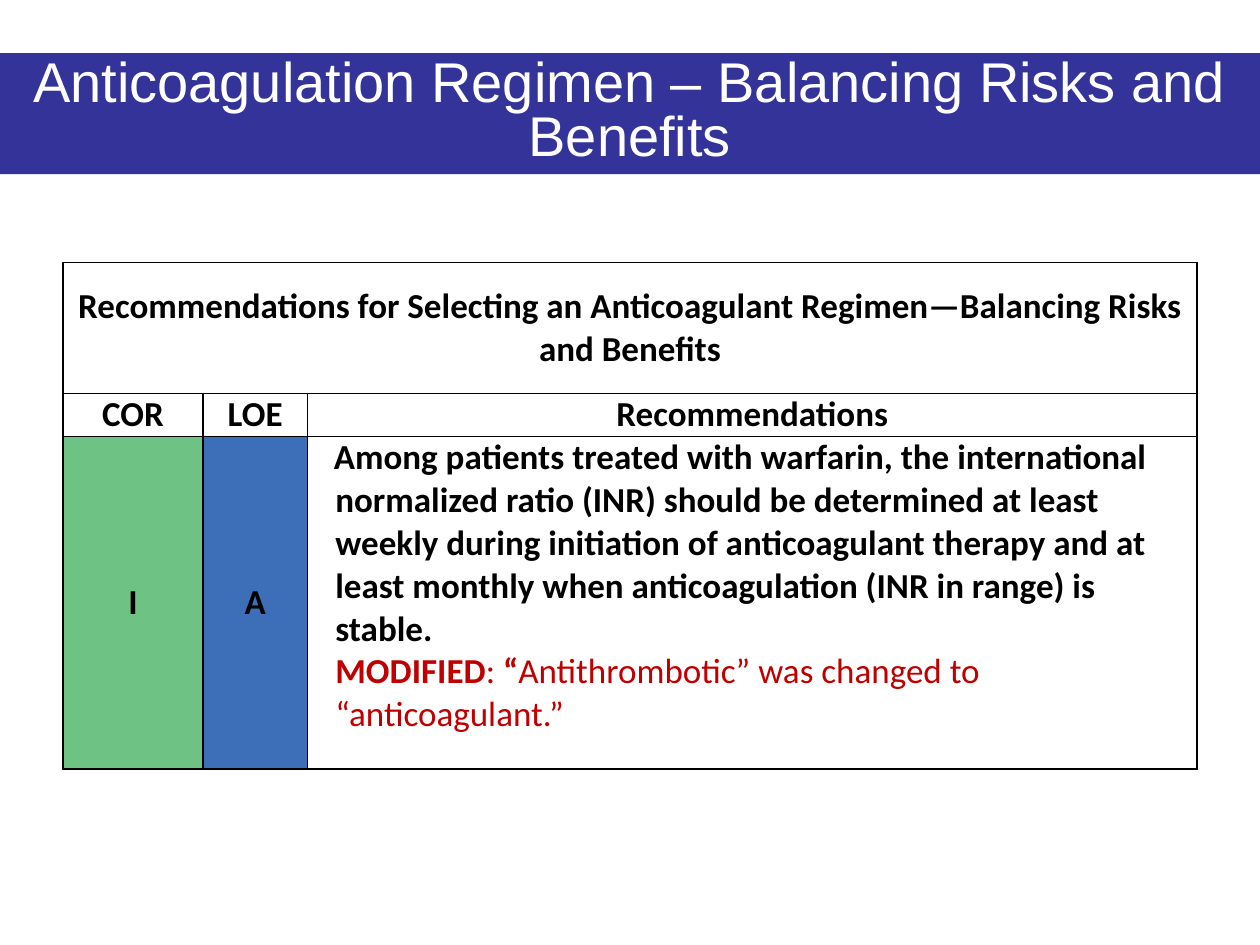
import dataclasses
import typing

import lxml.etree
import pptx
import pptx.dml.color
import pptx.enum.shapes
import pptx.enum.text
import pptx.oxml.ns
import pptx.util

Cm = pptx.util.Cm
Pt = pptx.util.Pt
CENTER = pptx.enum.text.PP_ALIGN.CENTER
LEFT = pptx.enum.text.PP_ALIGN.LEFT
MIDDLE = pptx.enum.text.MSO_ANCHOR.MIDDLE
TOP = pptx.enum.text.MSO_ANCHOR.TOP

COLORS = {
    "banner": "333399",
    "white": "FFFFFF",
    "black": "000000",
    "class_one": "6EC284",
    "level_a": "3D6FB8",
    "change": "C00000",
}
COLUMN_WIDTHS = (2.82, 2.11, 17.93)
ROW_HEIGHTS = (2.64, 0.81, 6.71)


@dataclasses.dataclass(frozen=True)
class Span:
    text: str
    color: str = "black"
    bold: bool = True


@dataclasses.dataclass(frozen=True)
class Line:
    spans: tuple[Span, ...]
    margin: float = 0
    indent: float = 0


@dataclasses.dataclass(frozen=True)
class Entry:
    row: int
    column: int
    lines: tuple[Line, ...]
    fill: str = "white"
    centered: bool = True


def label(row: int, column: int, text: str, fill: str = "white") -> Entry:
    return Entry(row, column, (Line((Span(text),)),), fill)


RECOMMENDATION = Line(
    (Span(
        "Among patients treated with warfarin, the international normalized ratio "
        "(INR) should be determined at least weekly during initiation of "
        "anticoagulant therapy and at least monthly when anticoagulation "
        "(INR in range) is stable."
    ),),
    margin=0.51,
    indent=-0.03,
)
MODIFICATION = Line(
    (
        Span("\tMODIFIED", "change"),
        Span(":", "change", False),
        Span(" “", "change"),
        Span("Antithrombotic” was changed to “anticoagulant.”", "change", False),
    ),
    margin=0.51,
    indent=-0.51,
)
ENTRIES = (
    label(0, 0, "Recommendations for Selecting an Anticoagulant Regimen—Balancing Risks and Benefits"),
    label(1, 0, "COR"),
    label(1, 1, "LOE"),
    label(1, 2, "Recommendations"),
    label(2, 0, "I", "class_one"),
    label(2, 1, "A", "level_a"),
    Entry(2, 2, (RECOMMENDATION, MODIFICATION), centered=False),
)


def rgb(name: str) -> pptx.dml.color.RGBColor:
    return pptx.dml.color.RGBColor.from_string(COLORS[name])


def style_font(font: typing.Any, family: str, size: float, color: str, bold: bool) -> None:
    font.name = family
    font.size = Pt(size)
    font.bold = bold
    font.color.rgb = rgb(color)


def draw_borders(cell: typing.Any) -> None:
    properties = cell._tc.get_or_add_tcPr()
    qn = pptx.oxml.ns.qn
    for side in ("lnL", "lnR", "lnT", "lnB"):
        border = lxml.etree.SubElement(properties, qn(f"a:{side}"), w=str(Pt(1)))
        solid = lxml.etree.SubElement(border, qn("a:solidFill"))
        lxml.etree.SubElement(solid, qn("a:srgbClr"), val=COLORS["black"])


def write_line(paragraph: typing.Any, line: Line, centered: bool) -> None:
    paragraph.alignment = CENTER if centered else LEFT
    properties = paragraph._p.get_or_add_pPr()
    properties.set("marL", str(Cm(line.margin)))
    properties.set("indent", str(Cm(line.indent)))
    for span in line.spans:
        run = paragraph.add_run()
        run.text = span.text
        style_font(run.font, "Calibri", 20, span.color, span.bold)


def fill_entry(table: typing.Any, entry: Entry) -> None:
    cell = table.cell(entry.row, entry.column)
    cell.fill.solid()
    cell.fill.fore_color.rgb = rgb(entry.fill)
    cell.vertical_anchor = MIDDLE if entry.centered else TOP
    cell.margin_left = cell.margin_right = Cm(0.05)
    cell.margin_top = cell.margin_bottom = 0
    frame = cell.text_frame
    for index, line in enumerate(entry.lines):
        paragraph = frame.add_paragraph() if index else frame.paragraphs[0]
        write_line(paragraph, line, entry.centered)


def draw_banner(slide: typing.Any, title: str) -> None:
    banner = slide.shapes.add_shape(
        pptx.enum.shapes.MSO_SHAPE.RECTANGLE, 0, Cm(1.07), Cm(25.4), Cm(2.44)
    )
    banner.shadow.inherit = False
    banner.fill.solid()
    banner.fill.fore_color.rgb = rgb("banner")
    banner.line.fill.background()
    frame = banner.text_frame
    frame.word_wrap = True
    frame.vertical_anchor = MIDDLE
    frame.text = title
    paragraph = frame.paragraphs[0]
    paragraph.alignment = CENTER
    paragraph.line_spacing = 0.8
    style_font(paragraph.runs[0].font, "Arial", 32, "white", False)


def draw_recommendations(slide: typing.Any) -> None:
    table = slide.shapes.add_table(
        len(ROW_HEIGHTS), len(COLUMN_WIDTHS), Cm(1.27), Cm(5.29),
        Cm(sum(COLUMN_WIDTHS)), Cm(sum(ROW_HEIGHTS)),
    ).table
    table.first_row = table.horz_banding = False
    for column, width in zip(table.columns, COLUMN_WIDTHS):
        column.width = Cm(width)
    for row, height in zip(table.rows, ROW_HEIGHTS):
        row.height = Cm(height)
    for cell in table.iter_cells():
        draw_borders(cell)
    table.cell(0, 0).merge(table.cell(0, 2))
    for entry in ENTRIES:
        fill_entry(table, entry)


def main() -> None:
    """Build the anticoagulation recommendations slide."""
    presentation = pptx.Presentation()
    presentation.slide_width = Cm(25.4)
    presentation.slide_height = Cm(19.05)
    slide = presentation.slides.add_slide(presentation.slide_layouts[6])
    draw_banner(slide, "Anticoagulation Regimen – Balancing Risks and Benefits")
    draw_recommendations(slide)
    presentation.save("out.pptx")


if __name__ == "__main__":
    main()
